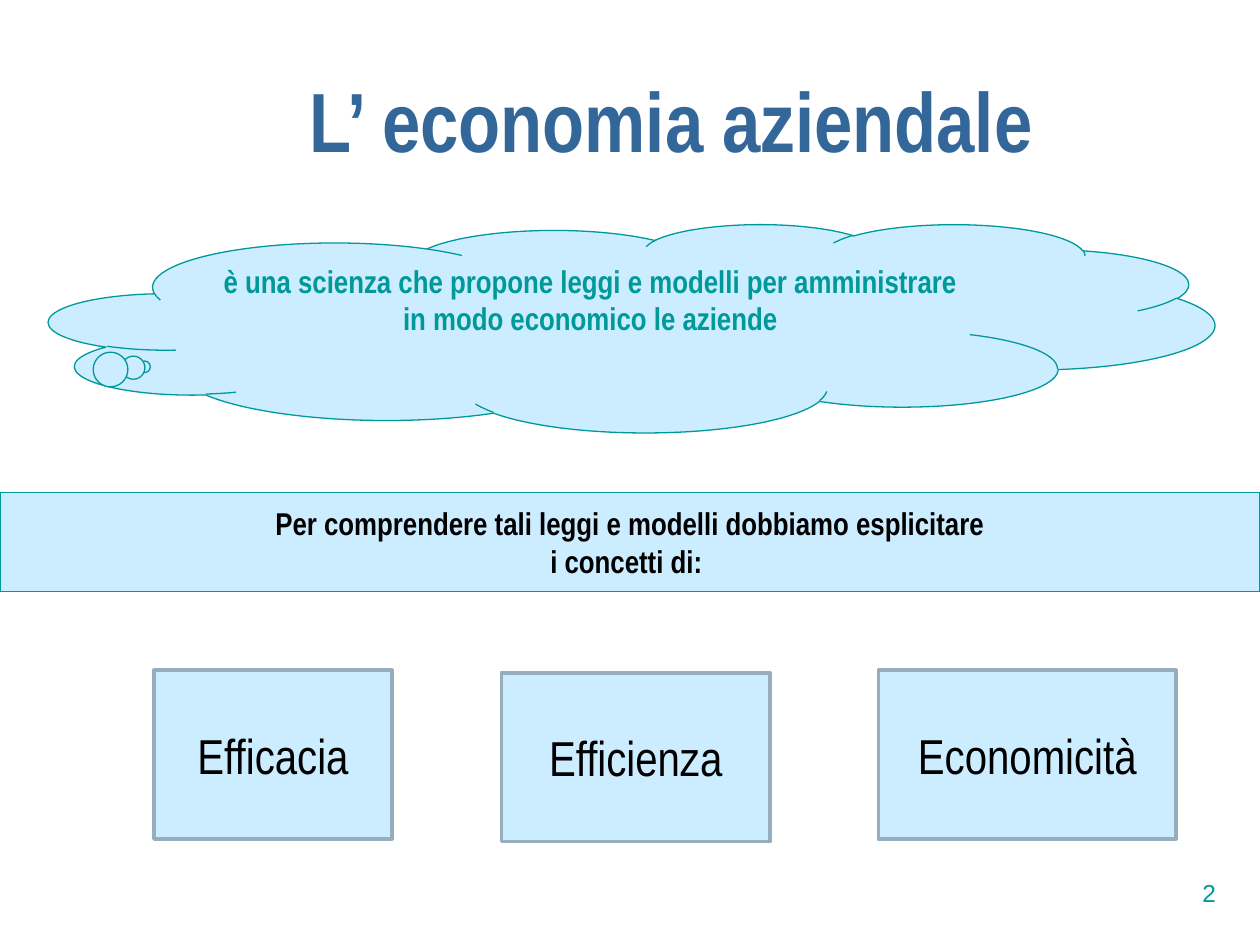
from pptx import Presentation
from pptx.dml.color import RGBColor
from pptx.enum.shapes import MSO_SHAPE as Shape
from pptx.enum.text import MSO_ANCHOR as Anchor, PP_ALIGN as Align
from pptx.util import Pt

COLORS = {
    "title": "336699",
    "teal": "009999",
    "ink": "010000",
    "pale": "CCECFF",
    "border": "95ADBC",
}
NARROW = "Arial Narrow"


class SlideBuilder:
    """Holds the style and the current slide."""

    def __init__(self, deck):
        self.slide = deck.slides.add_slide(deck.slide_layouts[6])

    def color(self, name):
        return RGBColor.from_string(COLORS[name])

    def fill_text(self, frame, lines, size, color, bold=False, font=NARROW,
                  align=Align.CENTER, anchor=Anchor.MIDDLE, wrap=True,
                  spacing=None):
        frame.word_wrap = wrap
        frame.vertical_anchor = anchor
        for index, line in enumerate(lines):
            paragraph = frame.add_paragraph() if index else frame.paragraphs[0]
            paragraph.alignment = align
            if spacing:
                paragraph.line_spacing = spacing
            run = paragraph.add_run()
            run.text = line
            run.font.name = font
            run.font.size = Pt(size)
            run.font.bold = bold
            run.font.color.rgb = self.color(color)

    def text(self, box, lines, size, color, **style):
        label = self.slide.shapes.add_textbox(*map(Pt, box))
        self.fill_text(label.text_frame, lines, size, color, **style)

    def shape(self, kind, box, line, width, lines, size, color,
              adjustments=(), **style):
        panel = self.slide.shapes.add_shape(kind, *map(Pt, box))
        panel.shadow.inherit = False
        for index, value in enumerate(adjustments):
            panel.adjustments[index] = value
        panel.fill.solid()
        panel.fill.fore_color.rgb = self.color("pale")
        panel.line.color.rgb = self.color(line)
        panel.line.width = Pt(width)
        self.fill_text(panel.text_frame, lines, size, color, **style)


def main():
    deck = Presentation()
    deck.slide_width, deck.slide_height = Pt(720), Pt(540)
    page = SlideBuilder(deck)

    # Page number and title
    page.text((552, 492, 150, 36), ["2"], 14, "teal", font="Arial",
              align=Align.RIGHT, wrap=False)
    page.text((65, 12, 637, 126), ["L’ economia aziendale"], 48, "title",
              bold=True, spacing=0.7)

    # Definition in a thought cloud
    page.shape(Shape.CLOUD_CALLOUT, (28, 128, 666, 119), "teal", 0.75,
               ["è una scienza che propone leggi e modelli per amministrare "
                "in modo economico le aziende"],
               18, "teal", bold=True, anchor=Anchor.TOP,
               adjustments=(-0.418, 0.186))

    # Full-width lead-in
    page.shape(Shape.RECTANGLE, (0, 281.5, 720, 56.5), "teal", 0.75,
               ["Per comprendere tali leggi e modelli dobbiamo esplicitare",
                "i concetti di: "],
               18, "ink", bold=True, wrap=False)

    # The three concepts
    concepts = [
        ("Efficacia", 88, 383, 136),
        ("Efficienza", 286.5, 384.5, 153.5),
        ("Economicità", 502, 383, 170),
    ]
    for concept, left, top, width in concepts:
        page.shape(Shape.RECTANGLE, (left, top, width, 96.5), "border", 2,
                   [concept], 28, "ink")

    deck.save("out.pptx")


if __name__ == "__main__":
    main()
